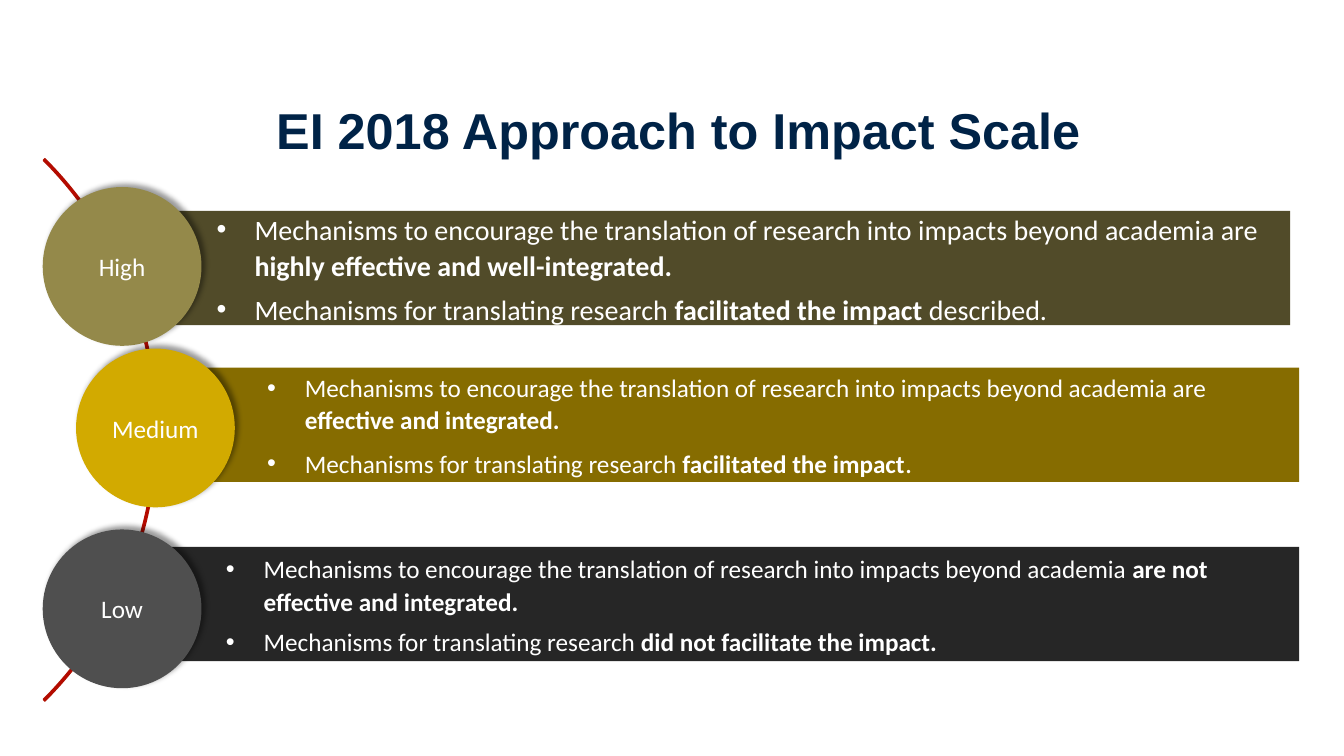
from lxml import etree
from pptx import Presentation
from pptx.dml.color import RGBColor
from pptx.enum.shapes import MSO_SHAPE
from pptx.enum.text import MSO_ANCHOR, PP_ALIGN
from pptx.oxml.ns import qn
from pptx.util import Pt

RECTANGLE, OVAL, BLOCK_ARC = MSO_SHAPE.RECTANGLE, MSO_SHAPE.OVAL, MSO_SHAPE.BLOCK_ARC
MIDDLE, CENTER = MSO_ANCHOR.MIDDLE, PP_ALIGN.CENTER

WHITE = RGBColor(0xFF, 0xFF, 0xFF)
NAVY = RGBColor(0x00, 0x23, 0x47)
ARC_FILL = RGBColor(0xC0, 0x00, 0x00)
ARC_LINE = RGBColor(0xB0, 0x10, 0x01)
OLIVE, DARK_OLIVE = RGBColor(0x94, 0x89, 0x4A), RGBColor(0x51, 0x4B, 0x29)
GOLD, DARK_GOLD = RGBColor(0xD2, 0xAA, 0x00), RGBColor(0x86, 0x6C, 0x00)
GRAY, DARK_GRAY = RGBColor(0x4F, 0x4F, 0x4F), RGBColor(0x26, 0x26, 0x26)

BAR_HEIGHT = 81.6
CIRCLE_SIZE = 113.4

ENCOURAGE = "Mechanisms to encourage the translation of research into impacts beyond academia "
TRANSLATE = "Mechanisms for translating research "

# Label, circle colour, circle left and top, bar colour, bar left, top and right,
# text size, and bullets made of (text, bold[, size]) runs
LEVELS = [
    ("High", OLIVE, 30.5, 133.6, DARK_OLIVE, 90, 150.6, 921.5, 20, [
        [(ENCOURAGE + "are ", False), ("highly effective and well-integrated.", True)],
        [(TRANSLATE, False), ("facilitated the impact ", True), ("described.", False)],
    ]),
    ("Medium", GOLD, 54.3, 249, DARK_GOLD, 126, 262.6, 928, 18, [
        [(ENCOURAGE + "are ", False), ("effective and integrated.", True)],
        [(TRANSLATE, False), ("facilitated the impact", True), (".", False, 20)],
    ]),
    ("Low", GRAY, 30.5, 378.2, DARK_GRAY, 96.5, 390.7, 928, 18, [
        [(ENCOURAGE, False), ("are not effective and integrated.", True)],
        [(TRANSLATE, False), ("did not facilitate the impact.", True)],
    ]),
]


def add_run(paragraph, text, size, color=WHITE, bold=False, font="Calibri"):
    run = paragraph.add_run()
    run.text = text
    run.font.name, run.font.size, run.font.bold = font, Pt(size), bold
    run.font.color.rgb = color


def set_frame(shape, left=0, other=0):
    frame = shape.text_frame
    frame.word_wrap = True
    frame.vertical_anchor = MIDDLE
    frame.margin_left = Pt(left)
    frame.margin_top = frame.margin_right = frame.margin_bottom = Pt(other)
    return frame


def add_filled(slide, kind, left, top, width, height, color):
    shape = slide.shapes.add_shape(kind, Pt(left), Pt(top), Pt(width), Pt(height))
    shape.shadow.inherit = False
    shape.fill.solid()
    shape.fill.fore_color.rgb = color
    shape.line.fill.background()
    return shape


def add_bullet(paragraph):
    properties = paragraph._p.get_or_add_pPr()
    properties.set("marL", str(Pt(27)))
    properties.set("indent", str(-Pt(27)))
    etree.SubElement(properties, qn("a:buFont"), typeface="Arial")
    etree.SubElement(properties, qn("a:buChar"), char="•")


def add_shadow(shape):
    effects = shape._element.spPr.find(qn("a:effectLst"))
    shadow = etree.SubElement(effects, qn("a:outerShdw"), blurRad=str(Pt(4)), dist=str(Pt(3)),
                              dir="18900000", algn="bl", rotWithShape="0")
    black = etree.SubElement(shadow, qn("a:srgbClr"), val="000000")
    etree.SubElement(black, qn("a:alpha"), val="40000")


def add_title(slide, text):
    box = slide.shapes.add_textbox(Pt(90), Pt(72), Pt(786), Pt(46.8))
    paragraph = set_frame(box, 7.2, 3.6).paragraphs[0]
    paragraph.alignment = CENTER
    paragraph.line_spacing = 0.9
    add_run(paragraph, text, 36, NAVY, True, "Arial")


def add_arc(slide):
    arc = add_filled(slide, BLOCK_ARC, -435.6, 33.1, 547.9, 547.9, ARC_FILL)
    for index, value in enumerate((189, 27, 0.003)):
        arc.adjustments[index] = value
    arc.line.color.rgb = ARC_LINE
    arc.line.width = Pt(1)


def add_bar(slide, left, top, right, color, size, bullets):
    bar = add_filled(slide, RECTANGLE, left, top, right - left, BAR_HEIGHT, color)
    frame = set_frame(bar, 64.8, 3)
    for index, runs in enumerate(bullets):
        paragraph = frame.add_paragraph() if index else frame.paragraphs[0]
        add_bullet(paragraph)
        paragraph.alignment = PP_ALIGN.LEFT
        paragraph.line_spacing = 1.07
        paragraph.space_after = Pt(6)
        for text, bold, *own_size in runs:
            add_run(paragraph, text, own_size[0] if own_size else size, bold=bold)


def add_circle(slide, left, top, color, label):
    circle = add_filled(slide, OVAL, left, top, CIRCLE_SIZE, CIRCLE_SIZE, color)
    add_shadow(circle)
    paragraph = set_frame(circle).paragraphs[0]
    paragraph.alignment = CENTER
    add_run(paragraph, label, 18)


def main():
    presentation = Presentation()
    presentation.slide_width, presentation.slide_height = Pt(960), Pt(540)
    slide = presentation.slides.add_slide(presentation.slide_layouts[6])

    # Heading and the arc behind the scale
    add_title(slide, "EI 2018 Approach to Impact Scale")
    add_arc(slide)

    # Scale levels, each a bar with its circle on top
    for (label, circle_color, circle_left, circle_top,
         bar_color, left, top, right, size, bullets) in LEVELS:
        add_bar(slide, left, top, right, bar_color, size, bullets)
        add_circle(slide, circle_left, circle_top, circle_color, label)

    presentation.save("out.pptx")


if __name__ == "__main__":
    main()
